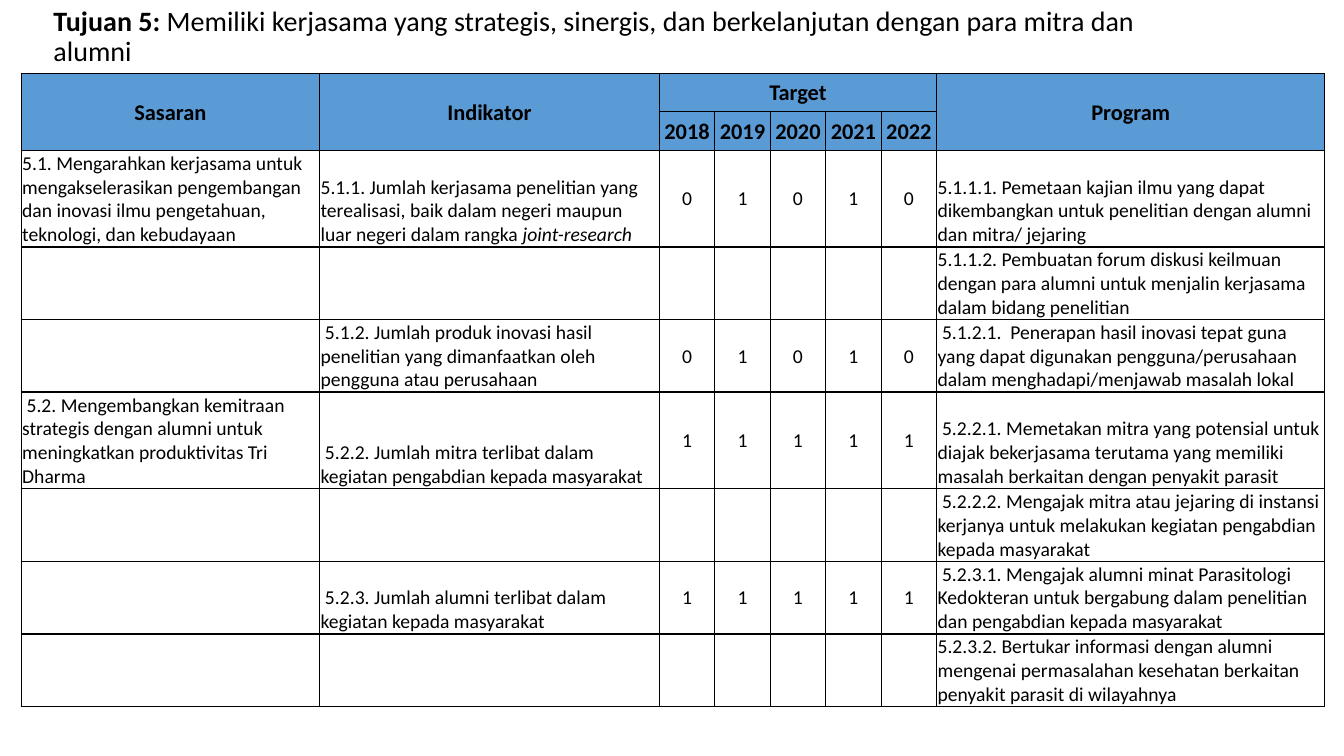
from dataclasses import dataclass

from lxml import etree
from pptx import Presentation
from pptx.dml.color import RGBColor
from pptx.enum.text import MSO_ANCHOR, MSO_AUTO_SIZE, PP_ALIGN
from pptx.oxml.ns import qn
from pptx.util import Inches, Pt

LEFT, CENTER = PP_ALIGN.LEFT, PP_ALIGN.CENTER
MIDDLE, BOTTOM = MSO_ANCHOR.MIDDLE, MSO_ANCHOR.BOTTOM
NO_AUTOFIT = MSO_AUTO_SIZE.NONE
TITLE_ONLY = 5


@dataclass(frozen=True)
class Theme:
    font: str = "Calibri"
    ink: str = "000000"
    header_fill: str = "5B9BD5"
    title_size: int = 20
    header_size: int = 16
    body_size: int = 14
    border_width: int = 1


THEME = Theme()
YEARS = ["2018", "2019", "2020", "2021", "2022"]
COLUMN_WIDTHS = [2.96, 3.37] + [0.55] * len(YEARS) + [3.85]
FIRST_YEAR, LAST_YEAR, PROGRAM = 2, 6, 7
HEADER_ROWS = 2
HEADER_HEIGHT, BODY_HEIGHT, TALL_HEIGHT = 0.38, 0.72, 0.96

PLAN = [
    ("5.1. Mengarahkan kerjasama untuk mengakselerasikan pengembangan dan inovasi "
     "ilmu pengetahuan, teknologi, dan kebudayaan",
     "5.1.1. Jumlah kerjasama penelitian yang terealisasi, baik dalam negeri maupun "
     "luar negeri dalam rangka |joint-research",
     "01010",
     "5.1.1.1. Pemetaan kajian ilmu yang dapat dikembangkan untuk penelitian dengan "
     "alumni dan mitra/ jejaring"),
    ("", "", "",
     "5.1.1.2. Pembuatan forum diskusi keilmuan dengan para alumni untuk menjalin "
     "kerjasama dalam bidang penelitian"),
    ("",
     " 5.1.2. Jumlah produk inovasi hasil penelitian yang dimanfaatkan oleh pengguna "
     "atau perusahaan",
     "01010",
     " 5.1.2.1.  Penerapan hasil inovasi tepat guna yang dapat digunakan "
     "pengguna/perusahaan dalam menghadapi/menjawab masalah lokal"),
    (" 5.2. Mengembangkan kemitraan strategis dengan alumni untuk meningkatkan "
     "produktivitas Tri Dharma",
     " 5.2.2. Jumlah mitra terlibat dalam kegiatan pengabdian kepada masyarakat",
     "11111",
     " 5.2.2.1. Memetakan mitra yang potensial untuk diajak bekerjasama terutama yang "
     "memiliki masalah berkaitan dengan penyakit parasit"),
    ("", "", "",
     " 5.2.2.2. Mengajak mitra atau jejaring di instansi kerjanya untuk melakukan "
     "kegiatan pengabdian kepada masyarakat"),
    ("",
     " 5.2.3. Jumlah alumni terlibat dalam kegiatan kepada masyarakat",
     "11111",
     " 5.2.3.1. Mengajak alumni minat Parasitologi Kedokteran untuk bergabung dalam "
     "penelitian dan pengabdian kepada masyarakat"),
    ("", "", "",
     "5.2.3.2. Bertukar informasi dengan alumni mengenai permasalahan kesehatan "
     "berkaitan penyakit parasit di wilayahnya"),
]


def format_run(run, size, bold=False, italic=False):
    run.font.name = THEME.font
    run.font.size = Pt(size)
    run.font.bold = bold
    run.font.italic = italic
    run.font.color.rgb = RGBColor.from_string(THEME.ink)


def add_title(slide, label, statement):
    title = slide.shapes.title
    title.left, title.top = Inches(0.43), Inches(0.01)
    title.width, title.height = Inches(11.51), Inches(0.72)
    frame = title.text_frame
    frame.word_wrap = True
    frame.auto_size = NO_AUTOFIT
    frame.vertical_anchor = MIDDLE
    paragraph = frame.paragraphs[0]
    paragraph.alignment = LEFT
    paragraph.line_spacing = 0.9
    for words, bold in ((label, True), (statement, False)):
        run = paragraph.add_run()
        run.text = words
        format_run(run, THEME.title_size, bold)


def add_borders(cell):
    properties = cell._tc.get_or_add_tcPr()
    for position, side in enumerate(("lnL", "lnR", "lnT", "lnB")):
        line = etree.Element(qn(f"a:{side}"), w=str(Pt(THEME.border_width)))
        fill = etree.SubElement(line, qn("a:solidFill"))
        etree.SubElement(fill, qn("a:srgbClr"), val=THEME.ink)
        properties.insert(position, line)


def style_cell(cell, is_header):
    cell.margin_left = cell.margin_right = cell.margin_top = Inches(0.01)
    cell.margin_bottom = 0
    if is_header:
        cell.fill.solid()
        cell.fill.fore_color.rgb = RGBColor.from_string(THEME.header_fill)
    else:
        cell.fill.background()
    add_borders(cell)


def write_header(cell, label):
    cell.text_frame.text = label
    cell.vertical_anchor = MIDDLE
    paragraph = cell.text_frame.paragraphs[0]
    paragraph.alignment = CENTER
    format_run(paragraph.runs[0], THEME.header_size, bold=True)


def write_body(cell, words, alignment, anchor):
    if not words:
        return
    cell.vertical_anchor = anchor
    paragraph = cell.text_frame.paragraphs[0]
    paragraph.alignment = alignment
    for position, part in enumerate(words.split("|")):
        run = paragraph.add_run()
        run.text = part
        format_run(run, THEME.body_size, italic=position == 1)


def fill_header(table):
    for column, label in ((0, "Sasaran"), (1, "Indikator"), (PROGRAM, "Program")):
        table.cell(0, column).merge(table.cell(1, column))
        write_header(table.cell(0, column), label)
    table.cell(0, FIRST_YEAR).merge(table.cell(0, LAST_YEAR))
    write_header(table.cell(0, FIRST_YEAR), "Target")
    for column, year in enumerate(YEARS, FIRST_YEAR):
        write_header(table.cell(1, column), year)


def fill_body(table):
    for row, (goal, indicator, targets, program) in enumerate(PLAN, HEADER_ROWS):
        for column, words in ((0, goal), (1, indicator), (PROGRAM, program)):
            write_body(table.cell(row, column), words, LEFT, BOTTOM)
        for column, target in enumerate(targets, FIRST_YEAR):
            write_body(table.cell(row, column), target, CENTER, MIDDLE)


def add_plan_table(slide):
    heights = [HEADER_HEIGHT] * HEADER_ROWS
    heights += [TALL_HEIGHT if goal else BODY_HEIGHT for goal, *_ in PLAN]
    table = slide.shapes.add_table(
        len(heights), len(COLUMN_WIDTHS), Inches(0.21), Inches(0.73),
        Inches(sum(COLUMN_WIDTHS)), Inches(sum(heights))).table
    table.first_row = False
    table.horz_banding = False
    for column, width in zip(table.columns, COLUMN_WIDTHS):
        column.width = Inches(width)
    for index, (row, height) in enumerate(zip(table.rows, heights)):
        row.height = Inches(height)
        for cell in row.cells:
            style_cell(cell, index < HEADER_ROWS)
    fill_header(table)
    fill_body(table)


def main():
    presentation = Presentation()
    presentation.slide_width = Inches(13.33)
    presentation.slide_height = Inches(7.5)
    slide = presentation.slides.add_slide(presentation.slide_layouts[TITLE_ONLY])
    add_title(slide, "Tujuan 5: ",
              "Memiliki kerjasama yang strategis, sinergis, dan berkelanjutan "
              "dengan para mitra dan alumni")
    add_plan_table(slide)
    presentation.save("out.pptx")


if __name__ == "__main__":
    main()
